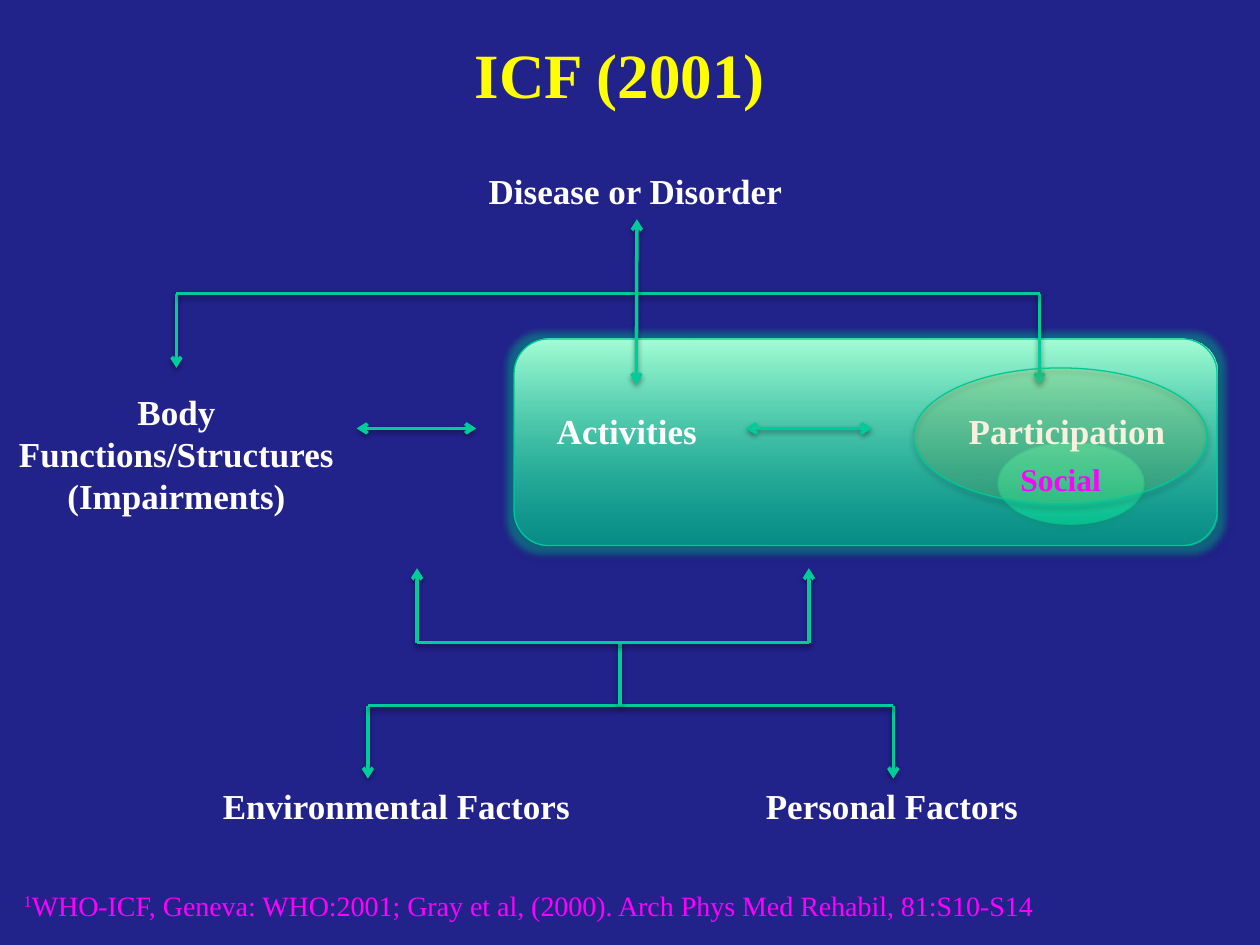
from lxml import etree
from pptx import Presentation
from pptx.dml.color import RGBColor
from pptx.enum import shapes, text
from pptx.oxml import ns
from pptx.util import Inches, Pt

NAVY = RGBColor(0x22, 0x22, 0x8B)
GREEN = RGBColor(0x00, 0xCC, 0x99)
EDGE = RGBColor(0x00, 0xC8, 0x96)
MINT = RGBColor(0xA5, 0xFF, 0xD6)
AMBER = RGBColor(0xFF, 0xC0, 0x00)
YELLOW = RGBColor(0xFF, 0xFF, 0x00)
WHITE = RGBColor(0xFF, 0xFF, 0xFF)
MAGENTA = RGBColor(0xFF, 0x00, 0xFF)
FONT = "Times New Roman"

# Content: paragraphs, position and size of each label
TITLE = "ICF (2001)"
CITATION = "WHO-ICF, Geneva: WHO:2001; Gray et al, (2000). Arch Phys Med Rehabil, 81:S10-S14"
LABELS = {
    "disease": ("Disease or Disorder", (3.78, 1.3, 2.55, 0.44)),
    "body": ("Body\vFunctions/Structures\n(Impairments)", (0.04, 3.05, 2.72, 1.11)),
    "activities": ("Activities", (4.32, 3.2, 1.32, 0.44)),
    "participation": ("Participation", (7.59, 3.2, 1.77, 0.44)),
    "environmental": ("Environmental Factors", (1.67, 6.18, 2.98, 0.44)),
    "personal": ("Personal Factors", (5.98, 6.18, 2.22, 0.44)),
}

# Levels and columns of the connecting lines
TOP_BAR, MIDDLE_BAR, LOW_BAR, ROW = 2.33, 5.1, 5.6, 3.4
BODY_X, PARTICIPATION_X = 1.4, 8.25
UP_LEFT, UP_RIGHT = 3.31, 6.42
ENVIRONMENT_X, PERSONAL_X = 2.92, 7.09
DISEASE_X, STEM_X = 5.05, 4.92

# Start, end, arrowheads, label joined at start, label joined at end
LINES = [
    ((ENVIRONMENT_X, LOW_BAR), (ENVIRONMENT_X, 6.18), "end", None, None),
    ((PERSONAL_X, LOW_BAR), (PERSONAL_X, 6.18), "end", None, "personal"),
    ((ENVIRONMENT_X, LOW_BAR), (PERSONAL_X, LOW_BAR), "", None, None),
    ((2.83, ROW), (3.78, ROW), "both", None, None),
    ((5.92, ROW), (6.92, ROW), "both", None, None),
    ((BODY_X, TOP_BAR), (BODY_X, 2.92), "end", None, None),
    ((PARTICIPATION_X, TOP_BAR), (PARTICIPATION_X, 3.05), "end", None, None),
    ((BODY_X, TOP_BAR), (PARTICIPATION_X, TOP_BAR), "", None, None),
    ((STEM_X, MIDDLE_BAR), (STEM_X, LOW_BAR), "", None, None),
    ((UP_LEFT, MIDDLE_BAR), (UP_LEFT, 4.51), "end", None, None),
    ((UP_RIGHT, MIDDLE_BAR), (UP_RIGHT, 4.51), "end", None, None),
    ((UP_LEFT, MIDDLE_BAR), (UP_RIGHT, MIDDLE_BAR), "", None, None),
    ((DISEASE_X, 1.74), (DISEASE_X, 3.05), "both", "disease", None),
]


def child(parent, tag, **attributes):
    element = etree.SubElement(parent, ns.qn(tag))
    for name, value in attributes.items():
        element.set(name, str(value))
    return element


def add_effects(shape, opacity, distance, glow=False):
    effects = child(shape._element.spPr, "a:effectLst")
    if glow:
        halo = child(effects, "a:glow", rad=Pt(8))
        color = child(halo, "a:srgbClr", val=GREEN)
        child(color, "a:alpha", val=40000)
    shadow = child(effects, "a:outerShdw", blurRad=Pt(3.1), dist=Pt(distance),
                   dir=5400000, rotWithShape=0)
    color = child(shadow, "a:srgbClr", val="000000")
    child(color, "a:alpha", val=opacity * 1000)


def set_opacity(shape, percent):
    color = shape._element.spPr.findall(".//" + ns.qn("a:srgbClr"))[0]
    child(color, "a:alpha", val=percent * 1000)


def add_panel(slide, kind, box, solid=None, opacity=None, glow=False):
    shape = slide.shapes.add_shape(kind, *map(Inches, box))
    if solid:
        shape.fill.solid()
        shape.fill.fore_color.rgb = solid
    else:
        shape.fill.gradient()
        shape.fill.gradient_angle = 90
        for stop, color, position in zip(shape.fill.gradient_stops, (GREEN, MINT), (0, 1)):
            stop.color.rgb = color
            stop.position = position
    if opacity:
        set_opacity(shape, opacity)
    shape.line.color.rgb = EDGE
    shape.line.width = Pt(0.75)
    add_effects(shape, 35, 1.8, glow)


def style(frame, size, color, bold=True, align=None):
    for paragraph in frame.paragraphs:
        paragraph.alignment = align
        for run in paragraph.runs:
            font = run.font
            font.name, font.size, font.bold = FONT, Pt(size), bold
            font.color.rgb = color


def add_label(slide, words, box, size=20, color=WHITE, align=None):
    shape = slide.shapes.add_textbox(*map(Inches, box))
    frame = shape.text_frame
    frame.text = words
    frame.word_wrap = False
    frame.auto_size = text.MSO_AUTO_SIZE.SHAPE_TO_FIT_TEXT
    style(frame, size, color, align=align)
    return shape


def add_line(slide, start, end, heads):
    line = slide.shapes.add_connector(shapes.MSO_CONNECTOR.STRAIGHT,
                                      *map(Inches, start + end))
    line.line.color.rgb = GREEN
    line.line.width = Pt(2)
    outline = line.line._get_or_add_ln()
    if heads == "both":
        child(outline, "a:headEnd", type="arrow")
    if heads:
        child(outline, "a:tailEnd", type="arrow")
    add_effects(line, 38, 1.6)
    return line


def main():
    presentation = Presentation()
    presentation.slide_width, presentation.slide_height = Inches(10), Inches(7.5)
    slide = presentation.slides.add_slide(presentation.slide_layouts[5])
    slide.background.fill.solid()
    slide.background.fill.fore_color.rgb = NAVY

    # Panels behind the labels
    add_panel(slide, shapes.MSO_SHAPE.OVAL, (7.92, 3.51, 1.16, 0.65))
    add_panel(slide, shapes.MSO_SHAPE.ROUNDED_RECTANGLE, (4.08, 2.69, 5.58, 1.64),
              opacity=40, glow=True)

    # Title
    title = slide.shapes.title
    title.left, title.top, title.width, title.height = map(Inches, (0.67, 0.17, 8.5, 0.83))
    title.text_frame.text = TITLE
    title.text_frame.vertical_anchor = text.MSO_ANCHOR.MIDDLE
    style(title.text_frame, 36, YELLOW, align=text.PP_ALIGN.CENTER)

    # Citation with its raised note number
    citation = add_label(slide, "1", (0.09, 7, 9.57, 0.37))
    citation.text_frame.word_wrap = True
    paragraph = citation.text_frame.paragraphs[0]
    paragraph.add_run().text = CITATION
    style(citation.text_frame, 16, MAGENTA, bold=False)
    paragraph.runs[0].font._element.set("baseline", "30000")

    # Labels
    labels = {}
    for name, (words, box) in LABELS.items():
        align = text.PP_ALIGN.CENTER if name == "body" else None
        labels[name] = add_label(slide, words, box, align=align)

    # Connecting lines
    for start, end, heads, source, target in LINES:
        line = add_line(slide, start, end, heads)
        if source:
            line.begin_connect(labels[source], 2)
        if target:
            line.end_connect(labels[target], 0)

    # Participation highlight and its social part
    add_panel(slide, shapes.MSO_SHAPE.OVAL, (7.25, 2.92, 2.33, 1.08), AMBER, opacity=10)
    add_label(slide, "Social", (8, 3.6, 0.85, 0.4), size=18, color=MAGENTA)

    presentation.save("out.pptx")


if __name__ == "__main__":
    main()
